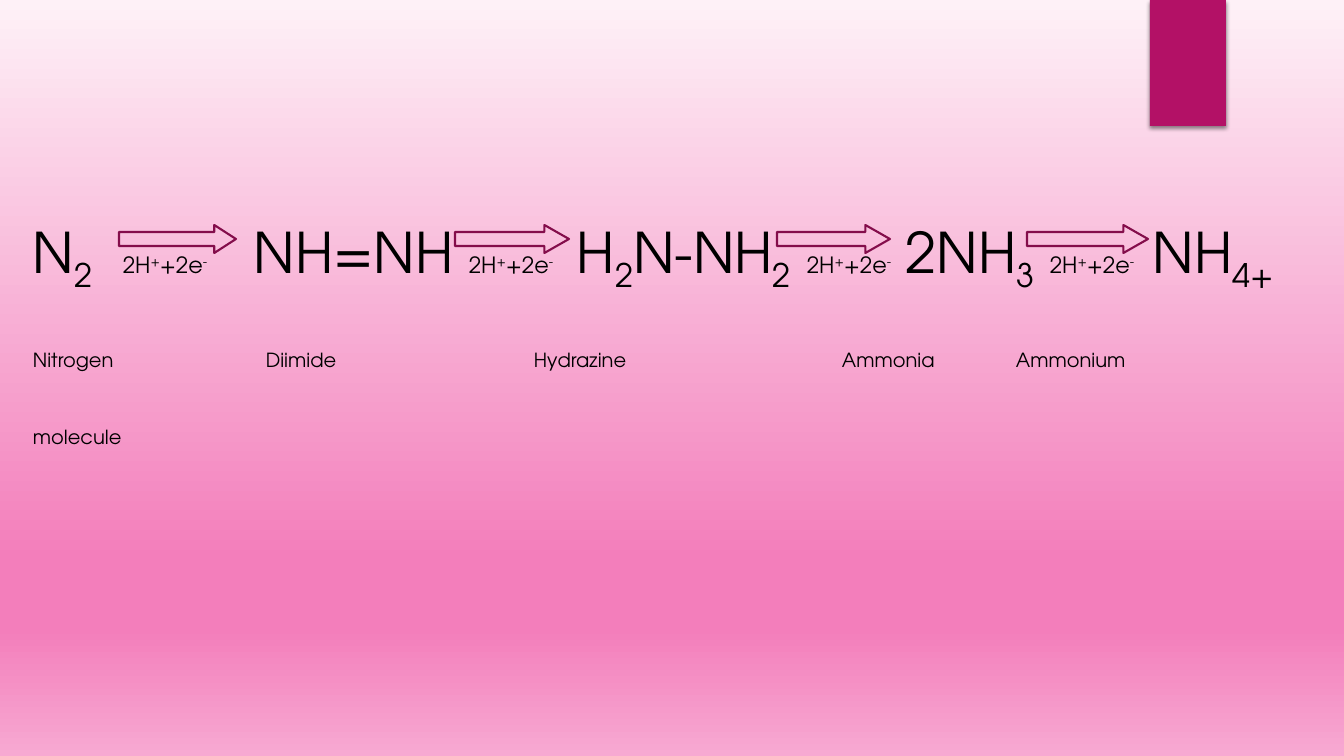
import dataclasses

import lxml.etree
import pptx
import pptx.dml.color
import pptx.enum.shapes
import pptx.oxml.ns
import pptx.util

SCALE = 914400 / 100.8


@dataclasses.dataclass(frozen=True)
class Theme:
    font: str = "TeX Gyre Adventor"
    ink: str = "000000"
    accent: str = "B31166"
    edge: str = "840D4B"
    sky: tuple = ((0, "FEF1F7"), (74, "F37EBB"), (83, "F37EBB"), (100, "F7A9D2"))
    large: int = 40
    label: int = 24
    small: int = 16
    pitch: int = 55


THEME = Theme()
TEXT_LEFT = 33
SHIFTS = {"_": "-25000", "^": "30000"}

# A leading _ lowers a part, a leading ^ raises it.
STAGES = [
    (33, ["N", "_2"]),
    (254, ["NH=NH"]),
    (577, ["H", "_2", "N-NH", "_2"]),
    (906, ["2NH", "_3"]),
    (1153, ["NH", "_4+"]),
]
STEP = ["2H", "^+", "+2e", "^-"]
STEP_LEFTS = [123, 469, 807, 1050]
LABELS = [
    (33, ["_Nitrogen"]),
    (266, ["_Diimide"]),
    (534, ["_Hydrazine"]),
    (842, ["_Ammonia"]),
    (1016, ["_Ammonium"]),
]
ARROWS = [(119, 117, 0.774), (455, 114, 0.878), (777, 113, 0.878), (1027, 121, 0.878)]


def px(*values):
    return [pptx.util.Emu(round(value * SCALE)) for value in values]


def color(code):
    return pptx.dml.color.RGBColor.from_string(code)


def add_node(parent, tag, **attrs):
    return lxml.etree.SubElement(parent, pptx.oxml.ns.qn(tag), attrs)


def paint_sky(slide):
    fill = slide.background.fill
    fill.gradient()
    fill.gradient_angle = 270
    stops = next(slide.element.iter(pptx.oxml.ns.qn("a:gsLst")))
    for stop in list(stops):
        stops.remove(stop)
    for place, code in THEME.sky:
        stop = add_node(stops, "a:gs", pos=str(place * 1000))
        add_node(stop, "a:srgbClr", val=code)


def add_ribbon(slide):
    kind = pptx.enum.shapes.MSO_SHAPE.RECTANGLE
    ribbon = slide.shapes.add_shape(kind, *px(1150, 0, 76, 126))
    ribbon.fill.solid()
    ribbon.fill.fore_color.rgb = color(THEME.accent)
    ribbon.line.fill.background()
    ribbon.shadow.inherit = False
    effects = next(ribbon.element.iter(pptx.oxml.ns.qn("a:effectLst")))
    shadow = add_node(effects, "a:outerShdw", blurRad="38100", dist="25400",
                      dir="5400000", rotWithShape="0")
    shade = add_node(shadow, "a:srgbClr", val="000000")
    add_node(shade, "a:alpha", val="45000")


def add_part(line, part, size):
    run = line.add_run()
    run.text = part.lstrip("_^")
    run.font.size = pptx.util.Pt(size)
    if part[0] in SHIFTS:
        run._r.get_or_add_rPr().set("baseline", SHIFTS[part[0]])


def fill_line(line, items):
    """Set (left, parts, size) items on one line, each at its own tab stop."""
    line.line_spacing = pptx.util.Pt(THEME.pitch)
    if len(items) > 1:
        tabs = add_node(line._p.get_or_add_pPr(), "a:tabLst")
        for left, _, _ in items[1:]:
            add_node(tabs, "a:tab", pos=str(px(left - TEXT_LEFT)[0]), algn="l")
    line.font.name = THEME.font
    line.font.color.rgb = color(THEME.ink)
    for index, (_, parts, size) in enumerate(items):
        if index:
            add_part(line, "\t", size)
        for part in parts:
            add_part(line, part, size)


def add_text(slide, rows):
    frame = slide.shapes.add_textbox(*px(23, 212, 1320, 168)).text_frame
    frame.word_wrap = True
    for index, items in enumerate(rows):
        line = frame.add_paragraph() if index else frame.paragraphs[0]
        fill_line(line, items)


def add_arrow(slide, left, width, head):
    kind = pptx.enum.shapes.MSO_SHAPE.RIGHT_ARROW
    arrow = slide.shapes.add_shape(kind, *px(left, 225, width, 28))
    arrow.adjustments[1] = head
    arrow.fill.background()
    arrow.line.color.rgb = color(THEME.edge)
    arrow.line.width = pptx.util.Pt(1.5)
    arrow.shadow.inherit = False


def main():
    deck = pptx.Presentation()
    deck.slide_width, deck.slide_height = px(1344, 756)
    slide = deck.slides.add_slide(deck.slide_layouts.get_by_name("Blank"))
    paint_sky(slide)
    add_ribbon(slide)
    chain = [(left, parts, THEME.large) for left, parts in STAGES]
    chain += [(left, STEP, THEME.small) for left in STEP_LEFTS]
    names = [(left, parts, THEME.label) for left, parts in LABELS]
    add_text(slide, [
        sorted(chain),
        names,
        [(TEXT_LEFT, ["_molecule"], THEME.label)],
    ])
    for left, width, head in ARROWS:
        add_arrow(slide, left, width, head)
    deck.save("out.pptx")


if __name__ == "__main__":
    main()
